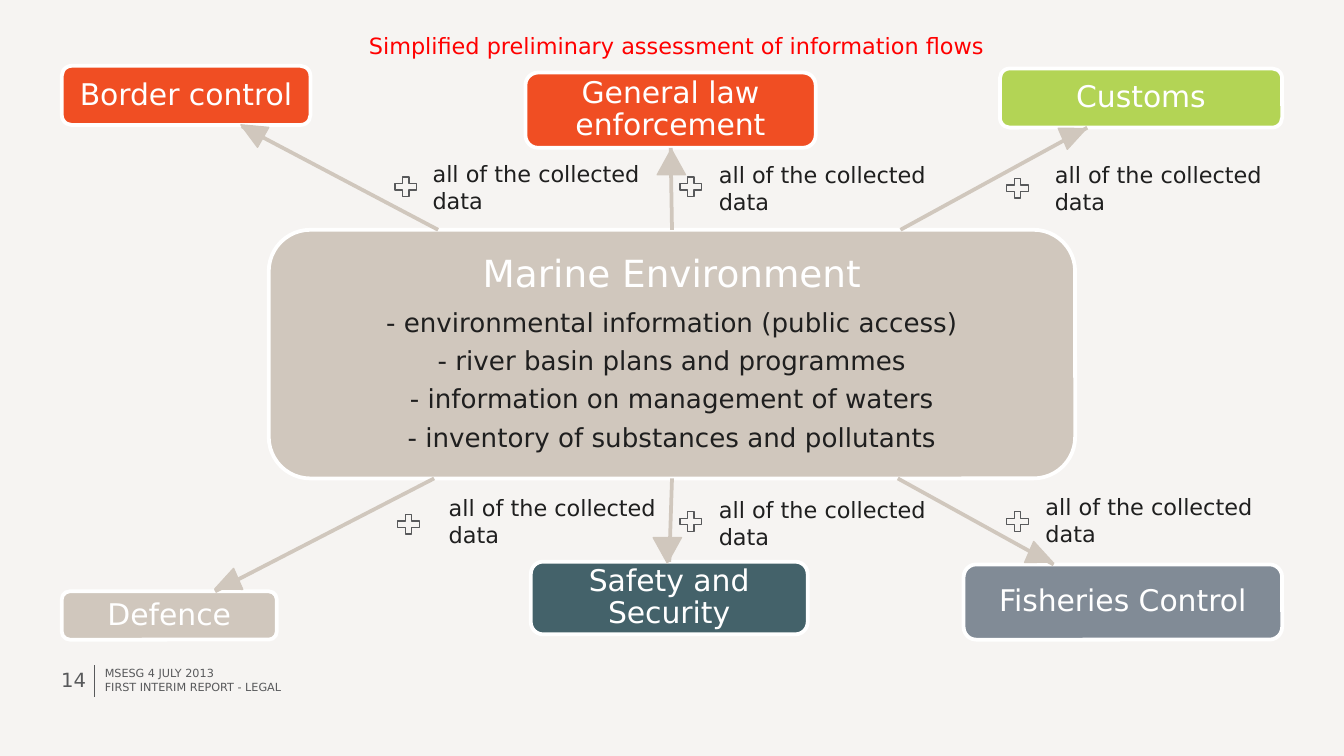
from dataclasses import dataclass
from typing import Optional

from lxml.etree import SubElement
from pptx import Presentation
from pptx.dml.color import RGBColor
from pptx.enum.shapes import MSO_CONNECTOR, MSO_SHAPE
from pptx.enum.text import MSO_ANCHOR, MSO_AUTO_SIZE, PP_ALIGN
from pptx.oxml.ns import qn
from pptx.util import Inches, Pt

COLS, ROWS = 100, 56.25
FONT = "DejaVu Sans"
COLORS = {
    "back": "F6F4F2", "sand": "D0C7BD", "orange": "F04E23", "lime": "B3D455",
    "slate": "818B96", "teal": "44626A", "white": "FFFFFF", "ink": "1F1F1F",
    "gray": "58595B", "red": "FF0000",
}


@dataclass
class Box:
    col: float
    row: float
    cols: float
    rows: float

    def emu(self) -> tuple:
        return tuple(cell(v) for v in (self.col, self.row, self.cols, self.rows))


@dataclass
class Line:
    text: str
    size: float
    color: str


@dataclass
class Flow:
    sector: str
    fill: str
    box: Box
    start: tuple
    end: tuple
    head: Box
    angle: float
    plus: tuple
    label: tuple
    sides: Optional[tuple] = None


FLOWS = [
    Flow("General law enforcement", "orange", Box(39.1, 5.4, 21.6, 5.6), (50, 17.1), (49.9, 11),
         Box(48.9, 11.1, 2.1, 1.9), 0, (50.3, 12.9), (52.5, 11.5), (0, 2)),
    Flow("Customs", "lime", Box(74.4, 5.1, 21, 4.4), (67, 17.1), (80.9, 9.5),
         Box(79.1, 9, 1.7, 1.9), 66.5, (74.6, 13), (77.5, 11.5)),
    Flow("Fisheries Control", "slate", Box(71.7, 42, 23.7, 5.6), (66.8, 35.6), (78.4, 42),
         Box(76.6, 40.5, 1.7, 1.9), 113.4, (74.6, 37.8), (76.8, 36.2)),
    Flow("Safety and Security", "teal", Box(39.5, 41.8, 20.6, 5.4), (50, 35.6), (49.8, 41.8),
         Box(48.6, 40, 2.1, 1.9), 180, (50.3, 37.8), (52.5, 36.4), (2, 0)),
    Flow("Defence", "sand", Box(4.6, 44, 16, 3.6), (32.3, 35.6), (16, 44),
         Box(16, 42.5, 1.7, 1.9), 246.4, (29.3, 38), (32.4, 36.3)),
    Flow("Border control", "orange", Box(4.6, 4.9, 18.5, 4.4), (32.6, 17.1), (18, 9.4),
         Box(17.9, 8.8, 1.7, 1.9), 299.4, (29.1, 12.9), (31.2, 11.4)),
]
HUB_ITEMS = [
    "- environmental information (public access)",
    "- river basin plans and programmes",
    "- information on management of waters",
    "- inventory of substances and pollutants",
]


def cell(count: float) -> int:
    return Inches(count / 10)


def rgb(name: str) -> RGBColor:
    return RGBColor.from_string(COLORS[name])


def write(s, lines: list, frame: dict, para: dict, gap: float = 0) -> None:
    tf = s.text_frame
    for key, value in {"word_wrap": True, "auto_size": MSO_AUTO_SIZE.NONE, **frame}.items():
        setattr(tf, key, value)
    for i, line in enumerate(lines):
        p = tf.add_paragraph() if i else tf.paragraphs[0]
        for key, value in {**para, "space_after": Pt(gap * line.size)}.items():
            setattr(p, key, value)
        r = p.add_run()
        r.text = line.text
        for key, value in {"name": FONT, "size": Pt(line.size), "bold": False}.items():
            setattr(r.font, key, value)
        r.font.color.rgb = rgb(line.color)


def margins(size: float) -> dict:
    sides = ("left", "top", "right", "bottom")
    return {f"margin_{side}": Inches(size) for side in sides}


def add_shape(slide, kind, box: Box, fill: Optional[str], line: str, width: float):
    s = slide.shapes.add_shape(kind, *box.emu())
    s.shadow.inherit = False
    if fill:
        s.fill.solid()
        s.fill.fore_color.rgb = rgb(fill)
    else:
        s.fill.background()
    s.line.color.rgb = rgb(line)
    s.line.width = Pt(width)
    return s


def add_panel(slide, box: Box, fill: str, lines: list, inset: float):
    s = add_shape(slide, MSO_SHAPE.ROUNDED_RECTANGLE, box, fill, "white", 2)
    write(s, lines, {"vertical_anchor": MSO_ANCHOR.MIDDLE, **margins(inset)},
          {"alignment": PP_ALIGN.CENTER, "line_spacing": 0.9}, gap=0.38)
    return s


def add_line(slide, start: tuple, end: tuple, color: str, width: float):
    s = slide.shapes.add_connector(MSO_CONNECTOR.STRAIGHT, *map(cell, start + end))
    s.line.color.rgb = rgb(color)
    s.line.width = Pt(width)
    SubElement(s._element.spPr, qn("a:effectLst"))
    return s


def add_flow(slide, hub, flow: Flow) -> None:
    node = add_panel(slide, flow.box, flow.fill, [Line(flow.sector, 16, "white")], 0.06)
    link = add_line(slide, flow.start, flow.end, "sand", 2)
    if flow.sides:
        link.begin_connect(hub, flow.sides[0])
        link.end_connect(node, flow.sides[1])
    head = add_shape(slide, MSO_SHAPE.ISOSCELES_TRIANGLE, flow.head, "sand", "sand", 0.75)
    head.rotation = flow.angle
    add_shape(slide, MSO_SHAPE.MATH_PLUS, Box(*flow.plus, 2.2, 2), None, "gray", 0.75)
    label = slide.shapes.add_textbox(*Box(*flow.label, 17.9, 5).emu())
    write(label, [Line(t, 12, "ink") for t in ("all of the collected", "data")], {}, {})


def add_footer(slide, box: Box, text: str, size: float, align) -> None:
    s = slide.shapes.add_textbox(*box.emu())
    write(s, [Line(text, size, "gray")], {"vertical_anchor": MSO_ANCHOR.MIDDLE, **margins(0)},
          {"alignment": align, "line_spacing": Pt(6)})


def main() -> None:
    prs = Presentation()
    prs.slide_width, prs.slide_height = cell(COLS), cell(ROWS)
    slide = prs.slides.add_slide(prs.slide_layouts[5])
    slide.background.fill.solid()
    slide.background.fill.fore_color.rgb = rgb("back")

    title = slide.shapes.title
    title.left, title.top, title.width, title.height = Box(26.2, 1.9, 48.3, 3).emu()
    write(title, [Line("Simplified preliminary assessment of information flows", 12, "red")],
          {"vertical_anchor": MSO_ANCHOR.TOP},
          {"alignment": PP_ALIGN.CENTER, "line_spacing": 1.0, "space_before": Pt(0)})

    hub_lines = [Line("Marine Environment", 20, "white")]
    hub_lines += [Line(item, 14, "ink") for item in HUB_ITEMS]
    hub = add_panel(slide, Box(20, 17.1, 60, 18.5), "sand", hub_lines, 0.15)
    for flow in FLOWS:
        add_flow(slide, hub, flow)

    add_line(slide, (7, 49.5), (7, 51.9), "gray", 0.25)
    add_footer(slide, Box(1.9, 48.9, 4.5, 4.2), "14", 10.5, PP_ALIGN.RIGHT)
    add_footer(slide, Box(7.8, 49.8, 21.4, 0.7), "MSESG 4 JULY 2013", 6, PP_ALIGN.LEFT)
    add_footer(slide, Box(7.8, 50.8, 21.4, 0.8), "FIRST INTERIM REPORT - LEGAL", 6, PP_ALIGN.LEFT)
    prs.save("out.pptx")


if __name__ == "__main__":
    main()
